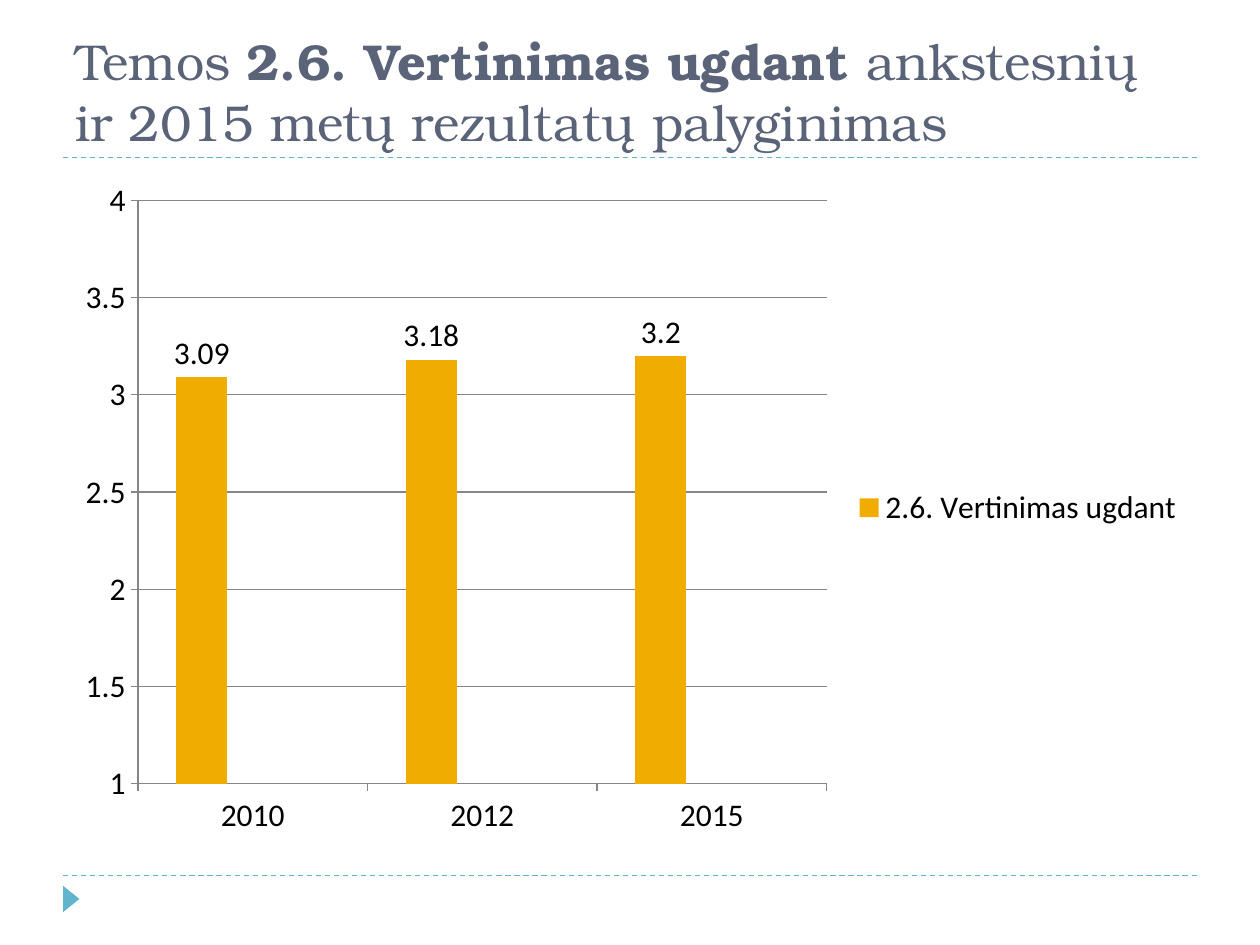
from lxml.etree import SubElement
from pptx import Presentation
from pptx.chart.data import CategoryChartData
from pptx.dml.color import RGBColor
from pptx.enum.chart import XL_CHART_TYPE as ChartType, XL_LABEL_POSITION as LabelPosition
from pptx.enum.chart import XL_LEGEND_POSITION as LegendPosition, XL_TICK_MARK as TickMark
from pptx.enum.dml import MSO_LINE as LineDash
from pptx.enum.shapes import MSO_CONNECTOR as Connector, MSO_SHAPE as Shape
from pptx.enum.text import MSO_ANCHOR as Anchor, MSO_AUTO_SIZE as AutoSize, PP_ALIGN as Align
from pptx.oxml import parse_xml
from pptx.oxml.ns import nsdecls, qn
from pptx.util import Inches, Pt

# Content
TITLE_RUNS = [
    ("Temos ", False),
    ("2.6. Vertinimas ugdant ", True),
    ("ankstesnių ir 2015 metų rezultatų palyginimas", False),
]
YEARS = ["2010", "2012", "2015"]
TEAL = RGBColor(0x60, 0xB5, 0xCC)
AMBER = RGBColor(0xF0, 0xAD, 0x00)
ROSE = RGBColor(0xE6, 0x6C, 0x7D)
SLATE = RGBColor(0x5A, 0x63, 0x78)
GREY = RGBColor(0x86, 0x86, 0x86)
BLACK = RGBColor(0, 0, 0)
SERIES = [
    ("2.6. Vertinimas ugdant", [3.09, 3.18, 3.2], AMBER),
    ("Series 2", [None] * 3, TEAL),
    ("Series 3", [None] * 3, ROSE),
]

# Page frame
MARGIN = Inches(0.5)
RULE_TOPS = [Inches(1.25), Inches(6.95)]

presentation = Presentation()
presentation.slide_width, presentation.slide_height = Inches(10), Inches(7.5)
content_width = presentation.slide_width - 2 * MARGIN
slide = presentation.slides.add_slide(presentation.slide_layouts[5])

# Dashed rules
for top in RULE_TOPS:
    rule = slide.shapes.add_connector(
        Connector.STRAIGHT, MARGIN, top, MARGIN + content_width, top)
    rule.line.color.rgb = TEAL
    rule.line.width = Pt(0.75)
    rule.line.dash_style = LineDash.DASH
    rule._element.spPr.append(parse_xml(f"<a:effectLst {nsdecls('a')}/>"))

# Footer marker
marker = slide.shapes.add_shape(
    Shape.ISOSCELES_TRIANGLE, Inches(0.46), Inches(7.07), Inches(0.21), Inches(0.13))
marker.rotation = 90
marker.shadow.inherit = False
marker.fill.solid()
marker.fill.fore_color.rgb = TEAL
marker.line.fill.background()

# Title
title = slide.shapes.title
title.left, title.top = MARGIN, Inches(0.17)
title.width, title.height = content_width, Inches(1.08)
frame = title.text_frame
frame.word_wrap = True
frame.auto_size = AutoSize.NONE
frame.vertical_anchor = Anchor.BOTTOM
paragraph = frame.paragraphs[0]
paragraph.alignment = Align.LEFT
for text, bold in TITLE_RUNS:
    run = paragraph.add_run()
    run.text = text
    run.font.name = "TeX Gyre Bonum"
    run.font.size = Pt(28.8)
    run.font.bold = bold
    run.font.color.rgb = SLATE

# Column chart
chart_data = CategoryChartData()
chart_data.categories = YEARS
for name, values, _ in SERIES:
    chart_data.add_series(name, values)
chart = slide.shapes.add_chart(
    ChartType.COLUMN_CLUSTERED, MARGIN, Inches(1.33), content_width, Inches(5.4),
    chart_data).chart
chart.has_title = False
chart.font.name = "Calibri"
chart.font.size = Pt(18)
chart.font.color.rgb = BLACK

plot = chart.plots[0]
plot.gap_width = 150
plot.overlap = 0
plot.vary_by_categories = False
for series, (_, _, color) in zip(plot.series, SERIES):
    series.format.fill.solid()
    series.format.fill.fore_color.rgb = color
labels = plot.series[0].data_labels
labels.show_value = True
labels.position = LabelPosition.OUTSIDE_END

# Axes
value_axis = chart.value_axis
value_axis.minimum_scale, value_axis.maximum_scale = 1, 4
value_axis.major_unit = 0.5
value_axis.has_major_gridlines = True
value_axis.major_gridlines.format.line.color.rgb = GREY
value_axis.major_gridlines.format.line.width = Pt(0.75)
for axis in (chart.category_axis, value_axis):
    axis.major_tick_mark = TickMark.OUTSIDE
    axis.minor_tick_mark = TickMark.NONE
    axis.format.line.color.rgb = GREY
    axis.format.line.width = Pt(0.75)

# Legend lists only the series that has values
chart.has_legend = True
legend = chart.legend
legend.position = LegendPosition.RIGHT
legend.include_in_layout = False
position_element = legend._element.find(qn("c:legendPos"))
for index in (2, 1):
    entry = parse_xml(f"<c:legendEntry {nsdecls('c')}/>")
    SubElement(entry, qn("c:idx"), val=str(index))
    SubElement(entry, qn("c:delete"), val="1")
    position_element.addnext(entry)

presentation.save("out.pptx")
